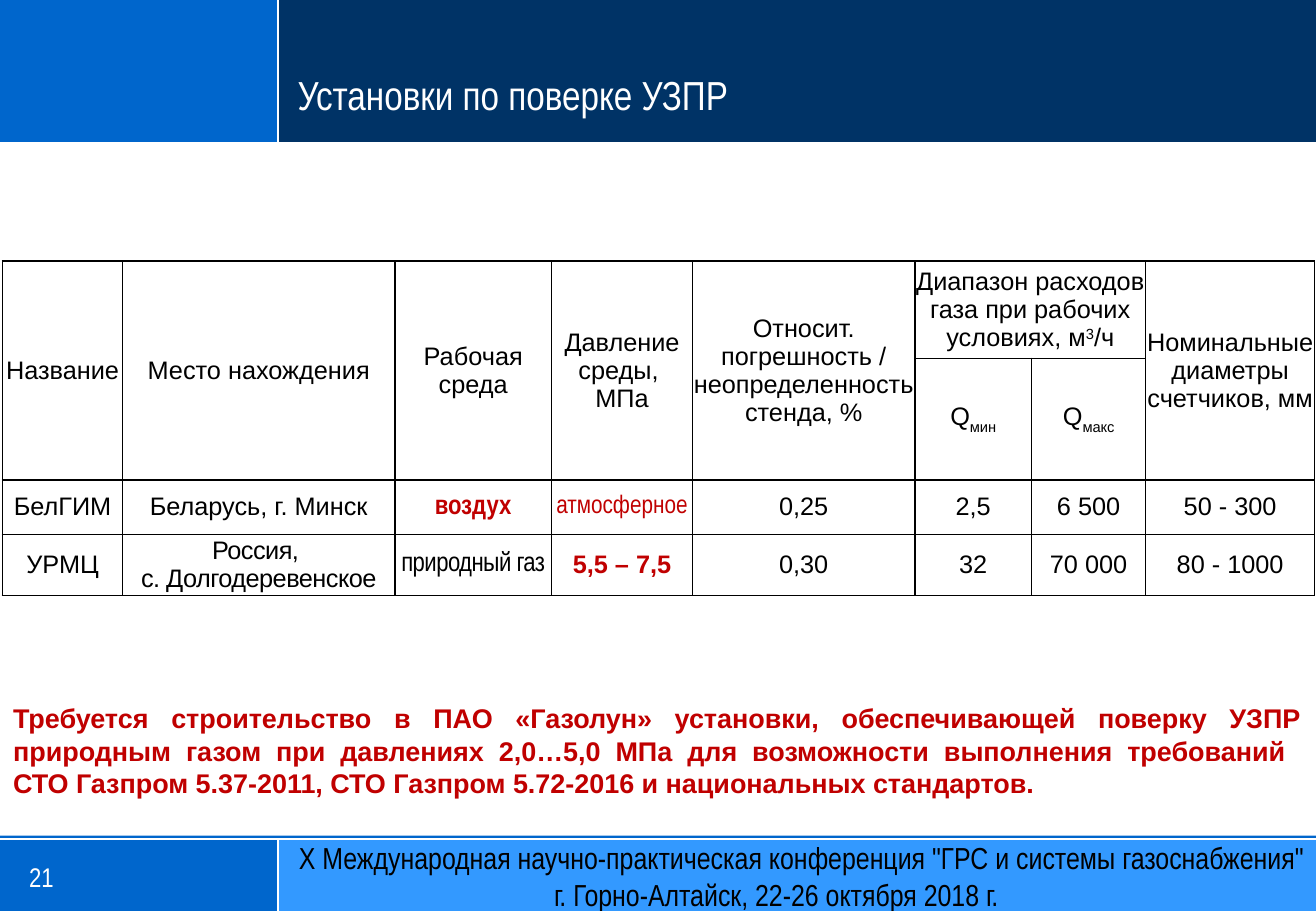
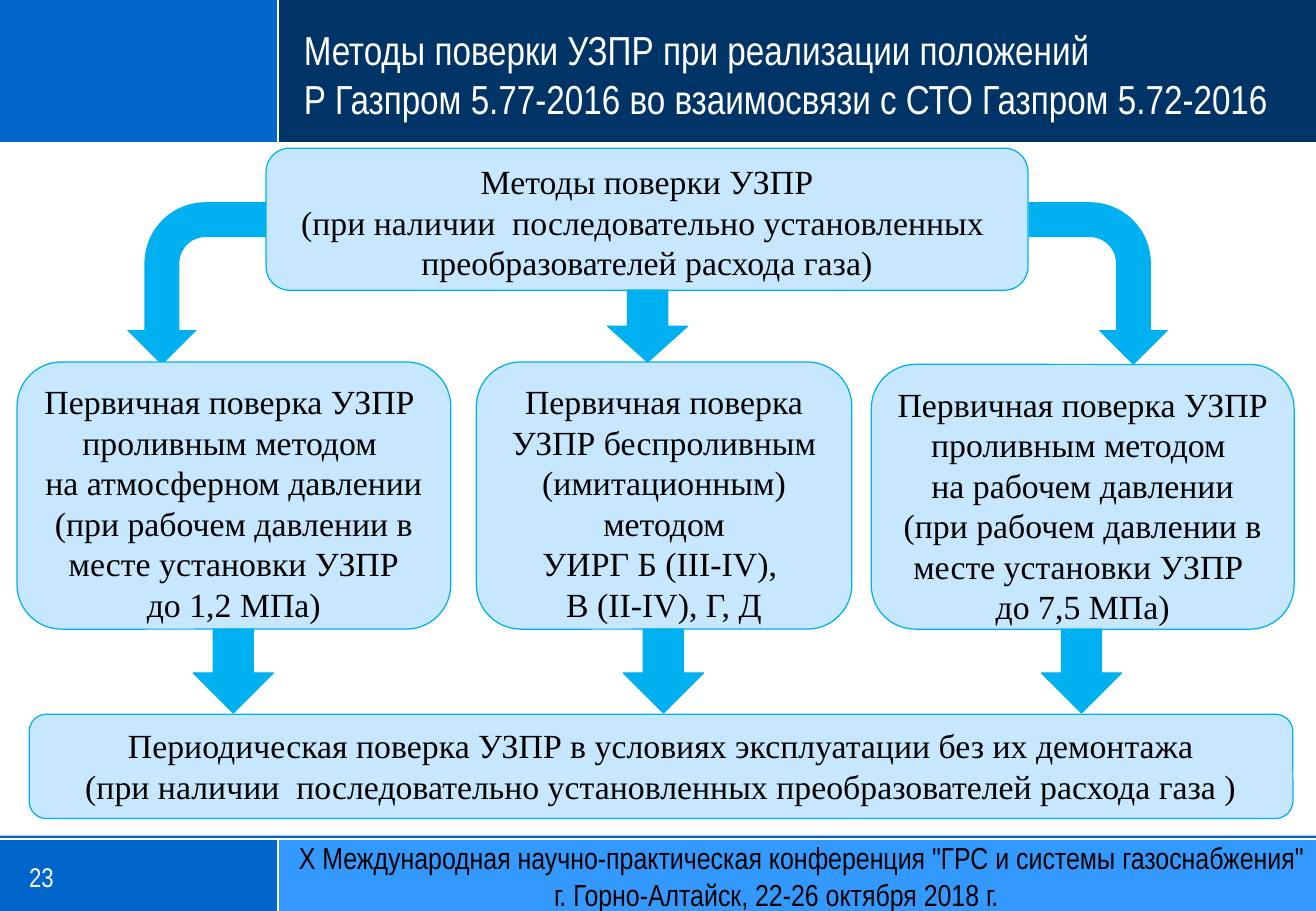
from lxml.etree import SubElement
from pptx import Presentation
from pptx.dml.color import RGBColor
from pptx.enum.shapes import MSO_CONNECTOR, MSO_SHAPE
from pptx.enum.text import MSO_ANCHOR, MSO_AUTO_SIZE, PP_ALIGN
from pptx.oxml.ns import qn
from pptx.util import Inches, Pt

BLUE = RGBColor(0x00, 0x66, 0xCC)
NAVY = RGBColor(0x00, 0x33, 0x66)
SKY = RGBColor(0x33, 0x99, 0xFF)
CYAN = RGBColor(0x00, 0xB0, 0xF0)
PALE = RGBColor(0xC6, 0xE7, 0xFE)
WHITE = RGBColor(0xFF, 0xFF, 0xFF)
BLACK = RGBColor(0x00, 0x00, 0x00)
RED = RGBColor(0xC0, 0x00, 0x00)
SANS, NARROW, SERIF = "Arial", "Arial Narrow", "Times New Roman"
WIDE, HIGH = 10.83, 7.5
SPLIT, HEAD, FOOT = 2.29, 1.18, 6.91


def inches(*nums):
    return [Inches(num) for num in nums]


def write(frame, lines, size=15, font=SANS, color=BLACK, bold=False,
          align=PP_ALIGN.LEFT, anchor=MSO_ANCHOR.TOP, inset=(0.1, 0.05),
          track=0):
    frame.word_wrap = True
    frame.vertical_anchor = anchor
    frame.margin_left = frame.margin_right = Inches(inset[0])
    frame.margin_top = frame.margin_bottom = Inches(inset[1])
    for num, line in enumerate(lines):
        para = frame.add_paragraph() if num else frame.paragraphs[0]
        para.alignment = align
        parts = [(line, 0)] if isinstance(line, str) else line
        for text, base in parts:
            for order, piece in enumerate(text.split("\n")):
                if order:
                    para.add_line_break()
                run = para.add_run()
                run.text = piece
                run.font.size = Pt(size)
                run.font.name = font
                run.font.bold = bold
                run.font.color.rgb = color
                props = run.font._element
                if base:
                    props.set("baseline", str(base * 1000))
                if track:
                    props.set("spc", str(track))


def label(slide, box, lines, **form):
    frame = slide.shapes.add_textbox(*inches(*box)).text_frame
    write(frame, lines, **form)
    return frame


def block(slide, kind, box, fill, line=None):
    shape = slide.shapes.add_shape(kind, *inches(*box))
    shape.shadow.inherit = False
    shape.fill.solid()
    shape.fill.fore_color.rgb = fill
    if line is None:
        shape.line.fill.background()
    else:
        shape.line.color.rgb = line
        shape.line.width = Pt(0.75)
    return shape


def rule(slide, *ends):
    line = slide.shapes.add_connector(MSO_CONNECTOR.STRAIGHT, *inches(*ends))
    line.line.color.rgb = WHITE
    line.line.width = Pt(1.25)
    SubElement(line._element.spPr, qn("a:effectLst"))


def footer(slide, box, number):
    left, top, width, height = box
    form = dict(font=NARROW, anchor=MSO_ANCHOR.MIDDLE, inset=(0, 0))
    label(slide, (left + 0.24, top + 0.05, 1.76, 0.52), [str(number)],
          size=16, color=WHITE, **form)
    frame = label(slide, (left + 2.46, top + 0.04, width - 2.48, 0.52), [
        'X Международная научно-практическая конференция "ГРС и системы газоснабжения"',
        "г. Горно-Алтайск, 22-26 октября 2018 г."], size=18, **form)
    props = frame.paragraphs[1]._p.get_or_add_pPr()
    props.set("marL", str(Inches(2.1)))
    props.set("indent", "0")


def start(deck, number, lines, box):
    slide = deck.slides.add_slide(deck.slide_layouts[5])
    slide.background.fill.solid()
    slide.background.fill.fore_color.rgb = BLUE
    for area, fill in (
            ((SPLIT, FOOT, WIDE - SPLIT, HIGH - FOOT), SKY),
            ((0, 0, SPLIT, HEAD), BLUE),
            ((SPLIT, 0, WIDE - SPLIT, HEAD), NAVY),
            ((0, HEAD, WIDE, 5.7), WHITE)):
        block(slide, MSO_SHAPE.RECTANGLE, area, fill)
    for ends in ((SPLIT, FOOT, SPLIT, HIGH), (SPLIT, 0, SPLIT, HEAD),
                 (0, HEAD, WIDE, HEAD), (0, FOOT, WIDE, FOOT)):
        rule(slide, *ends)
    title = slide.shapes.title
    slide.shapes._spTree.append(title._element)
    title.left, title.top, title.width, title.height = inches(*box)
    title.text_frame.auto_size = MSO_AUTO_SIZE.NONE
    write(title.text_frame, lines, size=24, font=NARROW, color=WHITE,
          anchor=MSO_ANCHOR.BOTTOM, inset=(0.09, 0.04))
    footer(slide, (0, FOOT, WIDE, HIGH - FOOT), number)
    return slide


def border(cell):
    props = cell._tc.get_or_add_tcPr()
    for side in ("lnL", "lnR", "lnT", "lnB"):
        line = SubElement(props, qn("a:" + side), w=str(Pt(1)))
        fill = SubElement(line, qn("a:solidFill"))
        SubElement(fill, qn("a:srgbClr"), val=str(BLACK))


def grid(slide, box):
    cols = (0.99, 2.24, 1.29, 1.16, 1.83, 0.96, 0.94, 1.39)
    rows = (0.8, 0.92, 0.45, 0.5)
    data = (
        (["Название"], ["Место нахождения"], ["Рабочая среда"],
         ["Давление среды, ", "МПа"],
         ["Относит. погрешность / неопределенность стенда, %"],
         [[("Диапазон расходов газа при рабочих условиях, м", 0),
           ("3", 30), ("/ч", 0)]],
         None, ["Номинальные диаметры счетчиков, мм"]),
        (None, None, None, None, None,
         [[("Q", 0), ("мин", -25)]], [[("Q", 0), ("макс", -25)]], None),
        (["БелГИМ"], ["Беларусь, г. Минск"], ["воздух"], ["атмосферное"],
         ["0,25"], ["2,5"], ["6 500"], ["50 - 300"]),
        (["УРМЦ"], ["Россия, ", "с. Долгодеревенское"], ["природный газ"],
         ["5,5 – 7,5"], ["0,30"], ["32"], ["70 000"], ["80 - 1000"]))
    forms = {
        (2, 2): dict(size=16, font=NARROW, color=RED, bold=True),
        (2, 3): dict(font=NARROW, color=RED),
        (3, 1): dict(track=-30),
        (3, 2): dict(size=16, font=NARROW, track=-30),
        (3, 3): dict(color=RED, bold=True)}
    table = slide.shapes.add_table(len(rows), len(cols), *inches(*box)).table
    table.first_row = table.horz_banding = False
    for col, width in zip(table.columns, cols):
        col.width = Inches(width)
    for row, height in zip(table.rows, rows):
        row.height = Inches(height)
    for col in (0, 1, 2, 3, 4, 7):
        table.cell(0, col).merge(table.cell(1, col))
    table.cell(0, 5).merge(table.cell(0, 6))
    for row, items in enumerate(data):
        for col, lines in enumerate(items):
            cell = table.cell(row, col)
            border(cell)
            cell.fill.background()
            cell.vertical_anchor = MSO_ANCHOR.MIDDLE
            cell.margin_left = cell.margin_right = 0
            cell.margin_top = cell.margin_bottom = 0
            if lines:
                write(cell.text_frame, lines, align=PP_ALIGN.CENTER,
                      anchor=MSO_ANCHOR.MIDDLE, inset=(0, 0),
                      **forms.get((row, col), {}))


def panel(slide, box, lines):
    shape = block(slide, MSO_SHAPE.ROUNDED_RECTANGLE, box, PALE, CYAN)
    write(shape.text_frame, lines, size=20, font=SERIF,
          align=PP_ALIGN.CENTER)


def arrow(slide, mid, top, height):
    block(slide, MSO_SHAPE.DOWN_ARROW, (mid - 0.33, top, 0.66, height),
          CYAN, CYAN)


def bend(slide, left, flip):
    shape = block(slide, MSO_SHAPE.BENT_ARROW, (left, 1.76, 1.34, 1.15), CYAN)
    shape.rotation = 90
    if flip:
        shape._element.spPr.find(qn("a:xfrm")).set("flipV", "1")


def scheme(slide, box):
    left, top, width, height = box
    bend(slide, left + 8.23, False)
    bend(slide, left + 0.81, True)
    panel(slide, (left + 2.05, top, 6.27, 1.17), [
        "Методы поверки УЗПР",
        "(при наличии  последовательно установленных  преобразователей расхода газа)"])
    first = "Первичная поверка УЗПР "
    flow = "проливным методом "
    panels = (
        (0, 1.76, 3.57, 2.2, [
            first, flow, "на атмосферном давлении ",
            "(при рабочем давлении в месте установки УЗПР", "до 1,2 МПа)"]),
        (3.78, 1.76, 3.09, 2.2, [
            first + "беспроливным (имитационным) методом",
            "УИРГ Б (III-IV), ", "B (II-IV), Г, Д"]),
        (7.03, 1.78, 3.48, 2.18, [
            first, flow, "на рабочем давлении",
            "(при рабочем давлении в месте установки УЗПР ", "до 7,5 МПа)"]))
    for shift, drop, span, tall, lines in panels:
        panel(slide, (left + shift, top + drop, span, tall), lines)
    panel(slide, (left + 0.1, top + height - 0.86, width - 0.11, 0.86), [
        "Периодическая поверка УЗПР в условиях эксплуатации без их демонтажа",
        "(при наличии  последовательно установленных преобразователей расхода газа )"])
    for shift in (1.78, 5.32, 8.76):
        arrow(slide, left + shift, top + 3.96, 0.69)
    arrow(slide, left + 5.19, top + 1.17, 0.59)


def main():
    deck = Presentation()
    deck.slide_width, deck.slide_height = inches(WIDE, HIGH)
    slide = start(deck, 21, ["Установки по поверке УЗПР"],
                  (2.36, 0.24, 8.44, 0.78))
    grid(slide, (0.02, 2.15, 10.8, 2.67))
    label(slide, (0.01, 5.73, 10.8, 0.91), [
        "Требуется строительство в ПАО «Газолун» установки, обеспечивающей "
        "поверку УЗПР природным газом при давлениях 2,0…5,0 МПа для "
        "возможности выполнения требований \n"
        "СТО Газпром 5.37-2011, СТО Газпром 5.72-2016 и национальных "
        "стандартов."], size=16, color=RED, bold=True,
        align=PP_ALIGN.JUSTIFY)
    slide = start(deck, 23, [
        "Методы поверки УЗПР при реализации положений",
        "Р Газпром 5.77-2016 во взаимосвязи с СТО Газпром 5.72-2016"],
        (2.41, 0.24, 8.39, 0.81))
    scheme(slide, (0.14, 1.22, 10.51, 5.52))
    deck.save("out.pptx")


if __name__ == "__main__":
    main()
